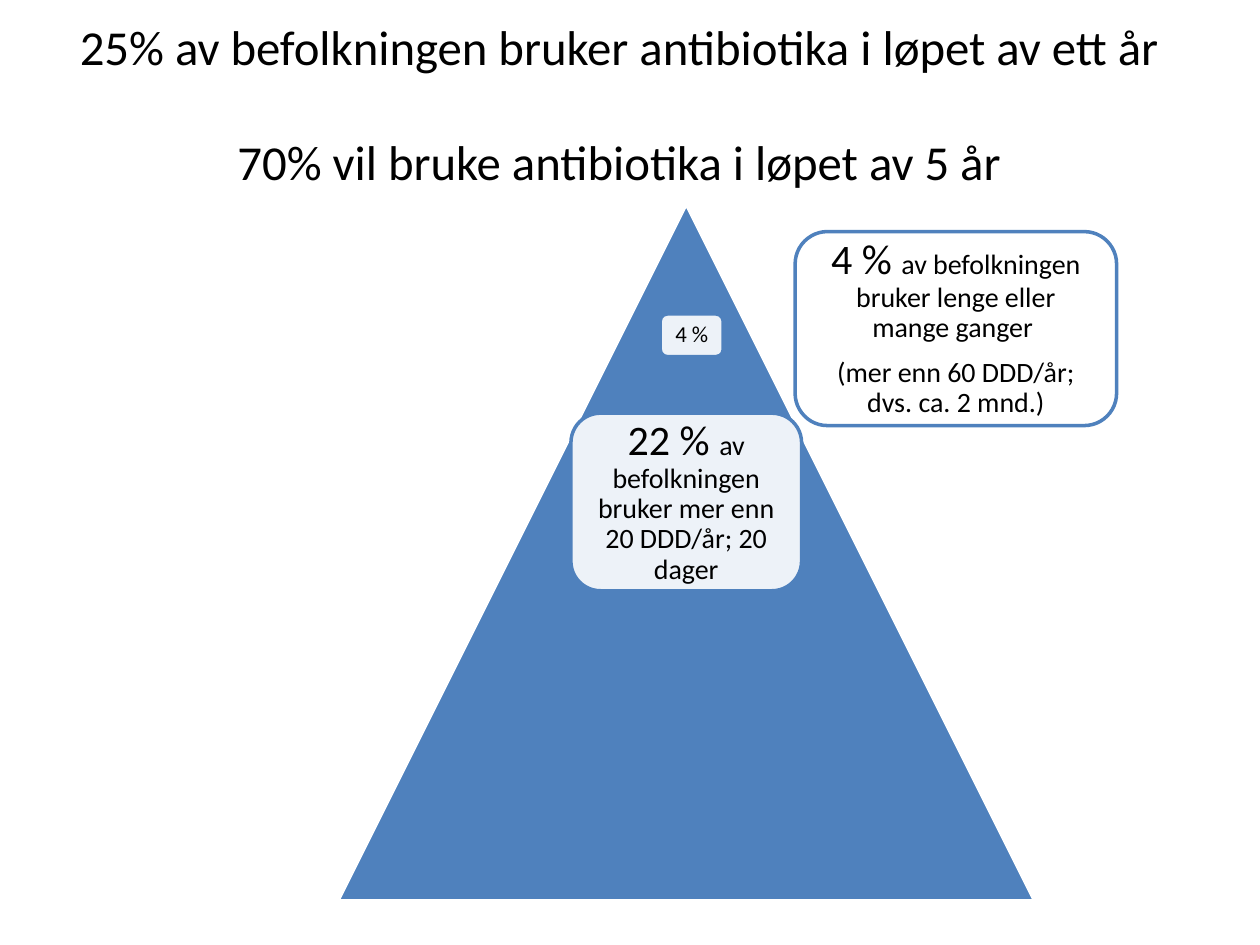
from dataclasses import dataclass

from lxml.etree import SubElement
from pptx import Presentation
from pptx.dml.color import RGBColor
from pptx.enum.shapes import MSO_SHAPE
from pptx.enum.text import MSO_ANCHOR, MSO_AUTO_SIZE, PP_ALIGN
from pptx.oxml.ns import qn
from pptx.util import Cm, Pt


@dataclass(frozen=True)
class Theme:
    font: str = "Calibri"
    ink: str = "000000"
    blue: str = "4F81BD"
    white: str = "FFFFFF"
    head: float = 27.9
    big: float = 24
    body: float = 16
    small: float = 13
    line: float = 2
    alpha: int = 90


class Deck:
    def __init__(self, theme):
        self.theme = theme
        self.prs = Presentation()
        self.prs.slide_width, self.prs.slide_height = Cm(25.4), Cm(19.05)
        self.slide = self.prs.slides.add_slide(self.prs.slide_layouts[5])

    def text(self, frame, paras, inset, form):
        """Fill a frame with paragraphs, each a list of (words, size) runs."""
        pad = Cm(inset)
        style = {
            "word_wrap": True, "auto_size": MSO_AUTO_SIZE.NONE,
            "vertical_anchor": MSO_ANCHOR.MIDDLE,
            "margin_left": pad, "margin_right": pad,
            "margin_top": pad, "margin_bottom": pad,
        }
        for key, value in style.items():
            setattr(frame, key, value)
        for i, runs in enumerate(paras):
            para = frame.add_paragraph() if i else frame.paragraphs[0]
            for key, value in {"alignment": PP_ALIGN.CENTER, **form}.items():
                setattr(para, key, value)
            for words, size in runs:
                run = para.add_run()
                run.text = words
                for key, value in {"name": self.theme.font, "size": Pt(size)}.items():
                    setattr(run.font, key, value)
                run.font.color.rgb = RGBColor.from_string(self.theme.ink)

    def title(self, box, lines):
        shape = self.slide.shapes.title
        for key, value in zip(("left", "top", "width", "height"), box):
            setattr(shape, key, Cm(value))
        shape.fill.solid()
        shape.fill.fore_color.rgb = RGBColor.from_string(self.theme.white)
        self.text(shape.text_frame, [[(line, self.theme.head)] for line in lines],
                  0.13, {"line_spacing": 0.97})
        # One line of air between the two statements, both set high in the box
        shape.text_frame.paragraphs[1].space_before = Pt(33)
        shape.text_frame.margin_bottom = Cm(0.9)

    def shape(self, kind, box, fill, line):
        shape = self.slide.shapes.add_shape(kind, *map(Cm, box))
        shape.shadow.inherit = False
        shape.fill.solid()
        shape.fill.fore_color.rgb = RGBColor.from_string(fill)
        shape.line.color.rgb = RGBColor.from_string(line)
        shape.line.width = Pt(self.theme.line)
        return shape

    def label(self, box, paras, inset=0.25):
        """Rounded, slightly see-through box with centred text."""
        shape = self.shape(MSO_SHAPE.ROUNDED_RECTANGLE, box,
                           self.theme.white, self.theme.blue)
        color = shape.element.spPr.find(qn("a:solidFill"))[0]
        SubElement(color, qn("a:alpha"), val=str(self.theme.alpha * 1000))
        self.text(shape.text_frame, paras, inset,
                  {"line_spacing": 0.9, "space_after": Pt(8.4)})


def main():
    theme = Theme()
    deck = Deck(theme)

    # Heading
    deck.title((0.2, 0.33, 24.56, 4.39), [
        "25% av befolkningen bruker antibiotika i løpet av ett år",
        "70% vil bruke antibiotika i løpet av 5 år",
    ])

    # Pyramid of the population
    deck.shape(MSO_SHAPE.ISOSCELES_TRIANGLE, (6.81, 4.11, 14.05, 14.05),
               theme.blue, theme.white)

    # Labels for the groups of users
    deck.label((16.03, 4.67, 6.48, 3.91), [
        [("4 % ", theme.big),
         ("av befolkningen bruker lenge eller mange ganger ", theme.body)],
        [("(mer enn 60 DDD/år; dvs. ca. 2 mnd.)", theme.body)],
    ])
    deck.label((11.51, 8.33, 4.65, 3.58), [
        [("22 % ", theme.big),
         ("av befolkningen bruker mer enn 20 DDD/år; 20 dager", theme.body)],
    ])
    deck.label((13.31, 6.33, 1.27, 0.86), [[("4 %", theme.small)]], inset=0.13)

    deck.prs.save("out.pptx")


if __name__ == "__main__":
    main()
